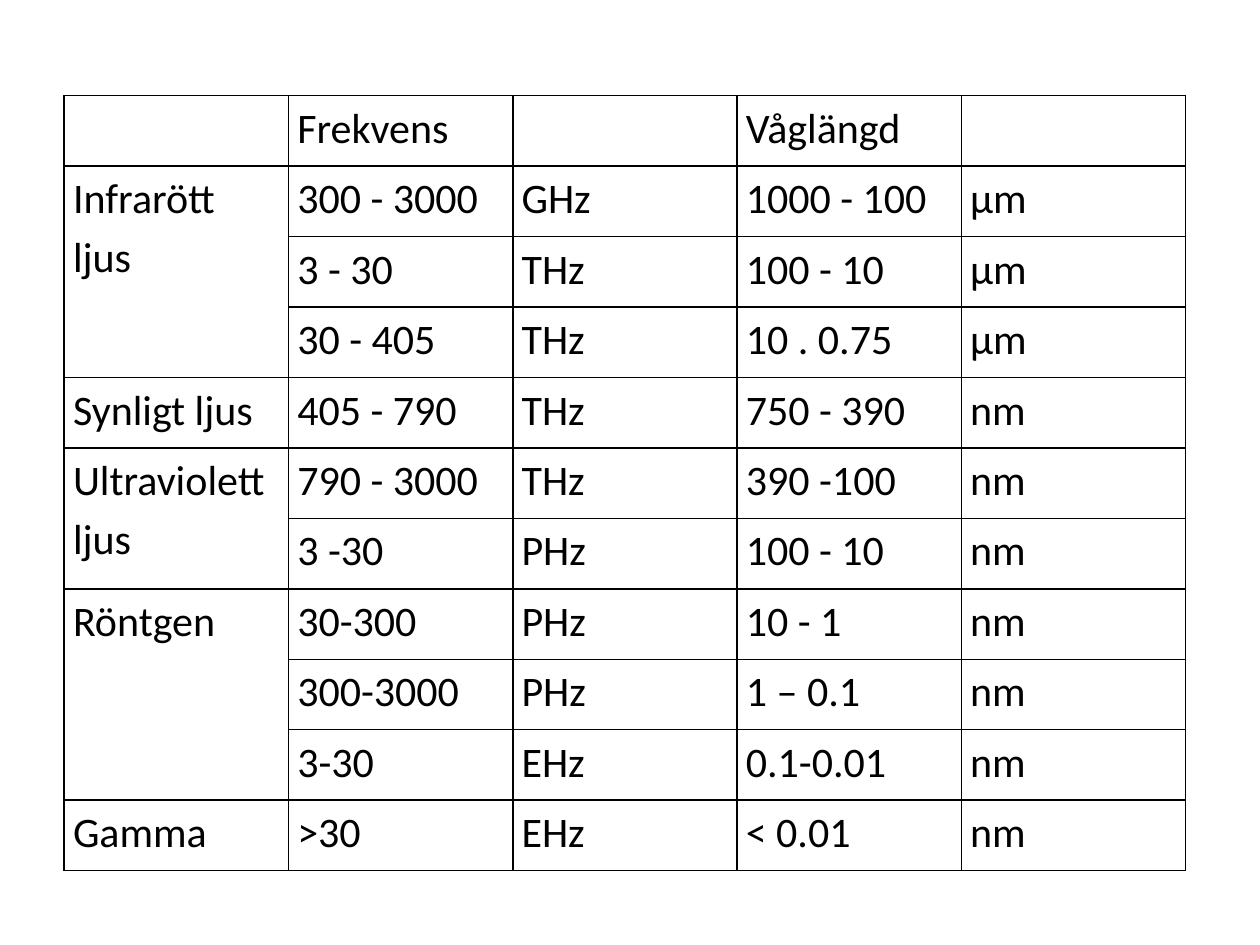
from lxml.etree import SubElement
from pptx import Presentation
from pptx.dml.color import RGBColor
from pptx.enum.text import MSO_ANCHOR
from pptx.oxml.ns import qn
from pptx.util import Inches, Pt

BLACK = RGBColor(0x00, 0x00, 0x00)
FONT = "Calibri"
HEADINGS = ("", "Frekvens", "", "Våglängd", "")
RADIATION = (
    ("Infrarött ljus", (
        ("300 - 3000", "GHz", "1000 - 100", "μm"),
        ("3 - 30", "THz", "100 - 10", "μm"),
        ("30 - 405", "THz", "10 . 0.75", "μm"),
    )),
    ("Synligt ljus", (("405 - 790", "THz", "750 - 390", "nm"),)),
    ("Ultraviolett ljus", (
        ("790 - 3000", "THz", "390 -100", "nm"),
        ("3 -30", "PHz", "100 - 10", "nm"),
    )),
    ("Röntgen", (
        ("30-300", "PHz", "10 - 1", "nm"),
        ("300-3000", "PHz", "1 – 0.1", "nm"),
        ("3-30", "EHz", "0.1-0.01", "nm"),
    )),
    ("Gamma", ((">30", "EHz", "< 0.01", "nm"),)),
)


def style_cell(cell):
    """Give a cell thin black borders, no fill and narrow margins."""
    properties = cell._tc.get_or_add_tcPr()
    for side in ("a:lnL", "a:lnR", "a:lnT", "a:lnB"):
        border = SubElement(properties, qn(side), w=str(Pt(1)))
        color = SubElement(SubElement(border, qn("a:solidFill")), qn("a:srgbClr"))
        color.set("val", str(BLACK))
    cell.fill.background()
    cell.margin_left = cell.margin_right = Inches(0.07)
    cell.margin_top = cell.margin_bottom = 0
    cell.vertical_anchor = MSO_ANCHOR.TOP


def write_cell(cell, text):
    """Write one text run in a cell, or leave it empty."""
    if not text:
        return
    paragraph = cell.text_frame.paragraphs[0]
    paragraph.line_spacing = 1.15
    run = paragraph.add_run()
    run.text = text
    run.font.name = FONT
    run.font.size = Pt(24)
    run.font.color.rgb = BLACK


def add_spectrum_table(slide, left, top, width, height):
    """Place the spectrum table in the given box."""
    row_count = 1 + sum(len(bands) for _, bands in RADIATION)
    table = slide.shapes.add_table(
        row_count, len(HEADINGS), left, top, width, height
    ).table
    table.first_row = table.horz_banding = False
    for cell in table.iter_cells():
        style_cell(cell)
    for column, heading in enumerate(HEADINGS):
        write_cell(table.cell(0, column), heading)
    row = 1
    for radiation, bands in RADIATION:
        name_cell = table.cell(row, 0)
        if len(bands) > 1:
            name_cell.merge(table.cell(row + len(bands) - 1, 0))
        write_cell(name_cell, radiation)
        for band in bands:
            for column, value in enumerate(band, start=1):
                write_cell(table.cell(row, column), value)
            row += 1


def main():
    """Build and save the slide."""
    presentation = Presentation()
    presentation.slide_width = Inches(10)
    presentation.slide_height = Inches(7.5)
    slide = presentation.slides.add_slide(presentation.slide_layouts[6])
    add_spectrum_table(slide, Inches(0.51), Inches(0.76), Inches(8.9), Inches(6.15))
    presentation.save("out.pptx")


if __name__ == "__main__":
    main()
